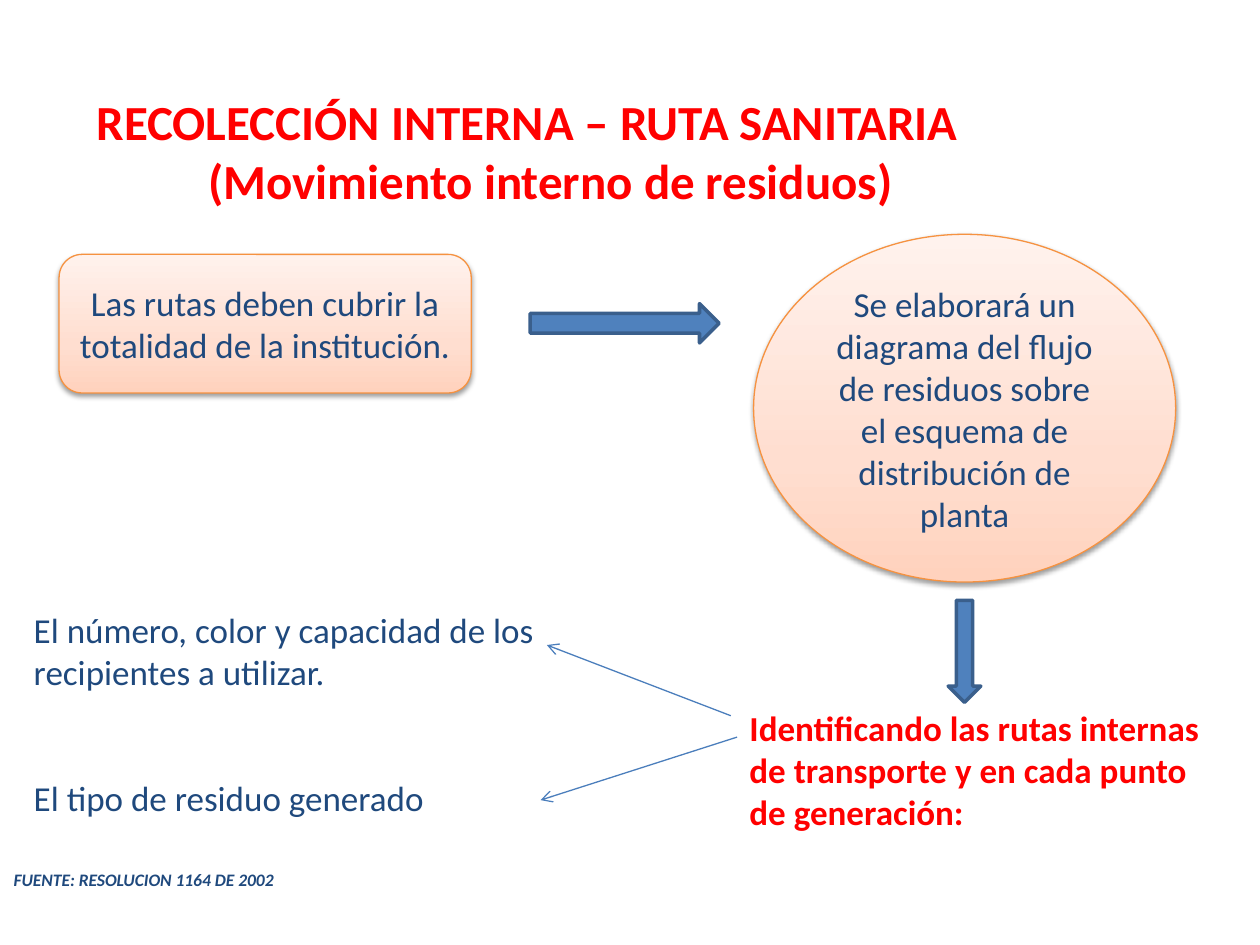
from copy import deepcopy

from lxml.etree import SubElement
from pptx import Presentation
from pptx.dml.color import RGBColor
from pptx.enum.shapes import MSO_CONNECTOR as Connector, MSO_SHAPE as Shape
from pptx.enum.text import MSO_ANCHOR as Anchor, MSO_AUTO_SIZE as AutoSize, PP_ALIGN as Align
from pptx.oxml.ns import qn
from pptx.util import Pt

RED = RGBColor(0xFF, 0x00, 0x00)
NAVY = RGBColor(0x1F, 0x49, 0x7D)
ORANGE = RGBColor(0xF6, 0x92, 0x40)
BLUE = RGBColor(0x4F, 0x81, 0xBD)
ARROW_EDGE = RGBColor(0x3A, 0x5F, 0x8C)
LINK_BLUE = RGBColor(0x4B, 0x7E, 0xBC)
PEACH_STOPS = (
    (0, RGBColor(0xFF, 0xD2, 0xBD)),
    (0.35, RGBColor(0xFF, 0xDE, 0xD0)),
    (1, RGBColor(0xFF, 0xF2, 0xED)),
)
BODY = {"size": Pt(20), "bold": False}
HEADING = {"size": Pt(28), "bold": True}
EMPHASIS = {"size": Pt(20), "bold": True}
SOURCE = {"size": Pt(10), "bold": True, "italic": True}


def points(*lengths):
    return [Pt(length) for length in lengths]


def write(paragraph, text, color, style, align=Align.LEFT):
    paragraph.text = text
    paragraph.alignment = align
    font = paragraph.font
    font.name = "Calibri"
    font.color.rgb = color
    for attribute, value in style.items():
        setattr(font, attribute, value)


def add_text(slide, box, lines, color, style, aligns=(Align.LEFT, Align.LEFT), gap=0):
    """Add a text box with one paragraph per line, gap points apart."""
    frame = slide.shapes.add_textbox(*points(*box)).text_frame
    frame.word_wrap = True
    frame.auto_size = AutoSize.SHAPE_TO_FIT_TEXT
    for index, (line, align) in enumerate(zip(lines, aligns)):
        paragraph = frame.add_paragraph() if index else frame.paragraphs[0]
        write(paragraph, line, color, style, align)
        if index and gap:
            paragraph.space_before = Pt(gap)


def fill_peach(fill, properties):
    fill.gradient()
    fill.gradient_angle = 90
    stop_list = properties.find(".//" + qn("a:gsLst"))
    stop_list.append(deepcopy(stop_list[-1]))
    for stop, (position, color) in zip(fill.gradient_stops, PEACH_STOPS):
        stop.position = position
        stop.color.rgb = color


def add_soft_shadow(properties):
    shadow = SubElement(
        properties.find(qn("a:effectLst")), qn("a:outerShdw"),
        blurRad=str(Pt(3.1)), dist=str(Pt(1.6)), dir="5400000", rotWithShape="0")
    black = SubElement(shadow, qn("a:srgbClr"), val="000000")
    SubElement(black, qn("a:alpha"), val="38000")


def add_step(slide, kind, box, text):
    step = slide.shapes.add_shape(kind, *points(*box))
    step.shadow.inherit = False
    step.line.color.rgb = ORANGE
    step.line.width = Pt(0.75)
    properties = step._element.spPr
    fill_peach(step.fill, properties)
    add_soft_shadow(properties)
    frame = step.text_frame
    frame.word_wrap = True
    frame.vertical_anchor = Anchor.MIDDLE
    write(frame.paragraphs[0], text, NAVY, BODY, Align.CENTER)


def add_block_arrow(slide, box, rotation=0):
    arrow = slide.shapes.add_shape(Shape.RIGHT_ARROW, *points(*box))
    arrow.rotation = rotation
    arrow.shadow.inherit = False
    arrow.fill.solid()
    arrow.fill.fore_color.rgb = BLUE
    arrow.line.color.rgb = ARROW_EDGE
    arrow.line.width = Pt(2)


def add_link(slide, start, end):
    link = slide.shapes.add_connector(Connector.STRAIGHT, *points(*start, *end))
    link.line.color.rgb = LINK_BLUE
    link.line.width = Pt(0.75)
    properties = link._element.spPr
    SubElement(properties.find(qn("a:ln")), qn("a:tailEnd"), type="arrow")
    SubElement(properties, qn("a:effectLst"))


def main():
    deck = Presentation()
    deck.slide_width, deck.slide_height = points(720, 540)
    slide = deck.slides.add_slide(deck.slide_layouts[6])

    add_text(slide, (48.2, 49, 532.8, 74.9),
             ["RECOLECCIÓN INTERNA – RUTA SANITARIA", "(Movimiento interno de residuos)"],
             RED, HEADING, (Align.LEFT, Align.CENTER))
    add_step(slide, Shape.ROUNDED_RECTANGLE, (33.8, 145.4, 235.5, 79.2),
             "Las rutas deben cubrir la totalidad de la institución.")
    add_block_arrow(slide, (303, 173.5, 108, 22.5))
    add_step(slide, Shape.OVAL, (430.6, 133.9, 241.2, 198.7),
             "Se elaborará un diagrama del flujo de residuos sobre "
             "el esquema de distribución de planta")
    add_text(slide, (421.2, 400.3, 278.6, 79.9),
             ["Identificando las rutas internas de transporte y en cada punto de generación:"],
             RED, EMPHASIS)
    add_block_arrow(slide, (522, 362.9, 58.3, 18.7), rotation=90)
    add_link(slide, (417.6, 409), (312.5, 368.6))
    add_text(slide, (12.2, 344.2, 337.7, 128.2),
             ["El número, color y capacidad de los recipientes a utilizar.",
              "El tipo de residuo generado"],
             NAVY, BODY, gap=48)
    add_link(slide, (421.2, 421.2), (308.9, 457.2))
    add_text(slide, (0.7, 493.2, 360, 19.4),
             ["FUENTE: RESOLUCION 1164 DE 2002"], NAVY, SOURCE)

    deck.save("out.pptx")


if __name__ == "__main__":
    main()
